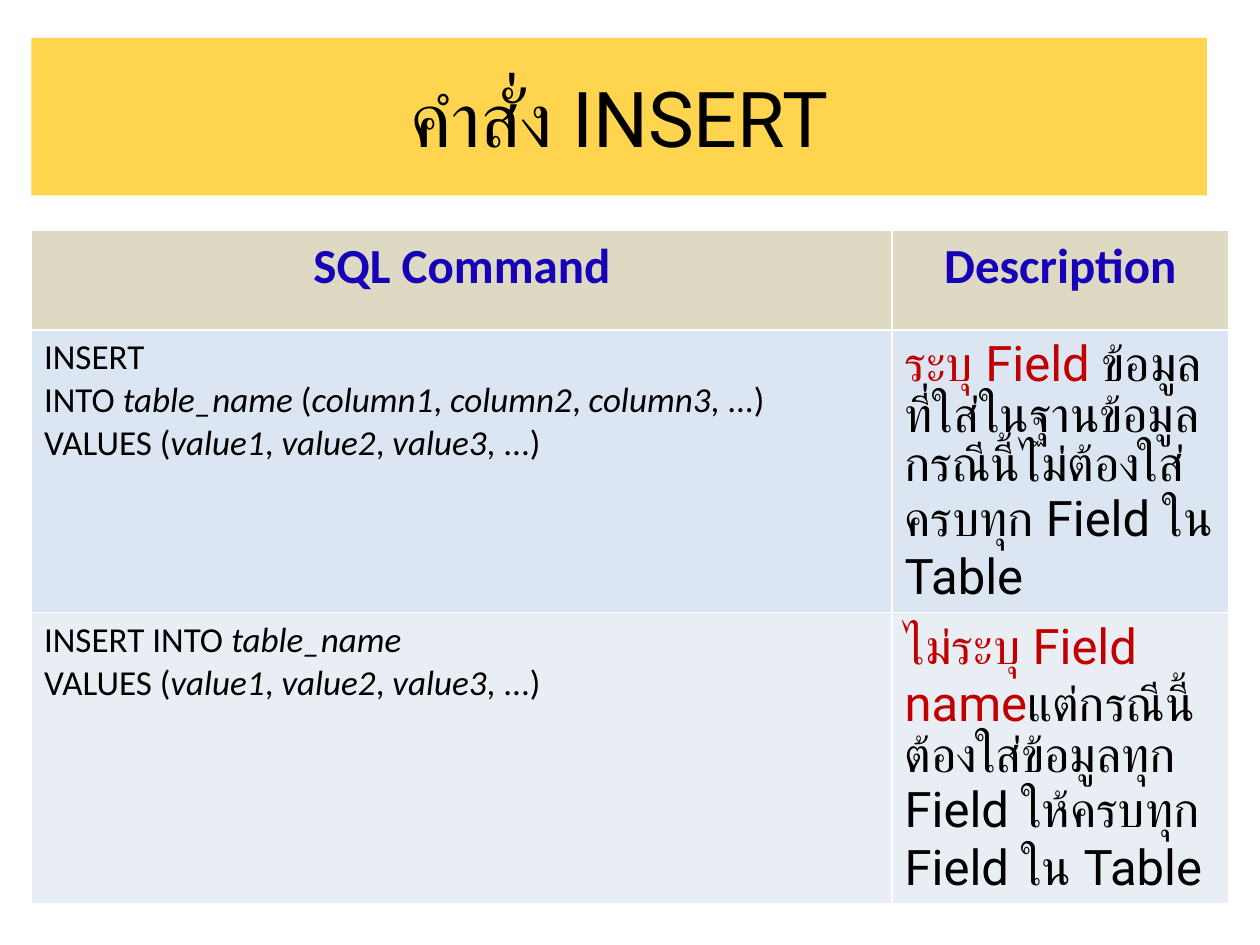
import pptx
import pptx.dml.color
import pptx.enum.shapes
import pptx.enum.text
import pptx.util

Inches = pptx.util.Inches
PP_ALIGN = pptx.enum.text.PP_ALIGN
COLORS = {
    "title": "FFD54F",
    "header": "DDD9C3",
    "first": "DCE6F2",
    "second": "E9EDF4",
    "heading": "1600B8",
    "accent": "C00000",
    "black": "000000",
}


def rgb(name):
    return pptx.dml.color.RGBColor.from_string(COLORS[name])


def write_text(frame, text, font="Roboto", size=28, color="black", bold=False,
               align=PP_ALIGN.LEFT, accent=None, italic=False):
    for number, content in enumerate(text.split("\n")):
        paragraph = frame.add_paragraph() if number else frame.paragraphs[0]
        paragraph.alignment = align
        for index, part in enumerate(content.split("*")):
            marked = index % 2 == 1
            for line, words in enumerate(part.split("|")):
                if line:
                    paragraph.add_line_break()
                if not words:
                    continue
                run = paragraph.add_run()
                run.text = words
                run.font.name = font
                run.font.size = pptx.util.Pt(size)
                run.font.bold = bold
                run.font.italic = italic and marked
                run.font.color.rgb = rgb(accent if accent and marked else color)


presentation = pptx.Presentation()
presentation.slide_width = Inches(10)
presentation.slide_height = Inches(7.5)
slide = presentation.slides.add_slide(presentation.slide_layouts[6])

title = slide.shapes.add_shape(
    pptx.enum.shapes.MSO_SHAPE.RECTANGLE,
    Inches(0.25), Inches(0.3), Inches(9.33), Inches(1.25))
title.shadow.inherit = False
title.fill.solid()
title.fill.fore_color.rgb = rgb("title")
title.line.fill.background()
title.text_frame.word_wrap = True
title.text_frame.vertical_anchor = pptx.enum.text.MSO_ANCHOR.MIDDLE
write_text(title.text_frame, "คำสั่ง INSERT", size=44, align=PP_ALIGN.CENTER)

heading_format = {"font": "Calibri", "color": "heading", "bold": True,
                  "align": PP_ALIGN.CENTER}
command_format = {"font": "Calibri", "size": 20, "italic": True}
description_format = {"accent": "accent"}
values = "VALUES (*value1*, *value2*, *value3*, ...)"
rows = [
    ("header", 0.79, [
        ("SQL Command", heading_format),
        ("Description", heading_format),
    ]),
    ("first", 2.09, [
        ("INSERT|INTO *table_name* (*column1*, *column2*, *column3*, ...)|" + values,
         command_format),
        ("*ระบุ Field *ข้อมูลที่ใส่ในฐานข้อมูล\nกรณีนี้ไม่ต้องใส่ครบทุก Field ใน Table",
         description_format),
    ]),
    ("second", 1.59, [
        ("INSERT INTO *table_name*|" + values, command_format),
        ("*ไม่ระบุ Field name*แต่กรณีนี้ต้องใส่ข้อมูลทุก Field ให้ครบทุก Field ใน Table",
         description_format),
    ]),
]

table = slide.shapes.add_table(
    len(rows), 2, Inches(0.25), Inches(1.83), Inches(9.5), Inches(4.47)).table
for column, width in zip(table.columns, (6.83, 2.67)):
    column.width = Inches(width)
for row, (fill, height, cells) in zip(table.rows, rows):
    row.height = Inches(height)
    for cell, (text, text_format) in zip(row.cells, cells):
        cell.fill.solid()
        cell.fill.fore_color.rgb = rgb(fill)
        write_text(cell.text_frame, text, **text_format)

presentation.save("out.pptx")
